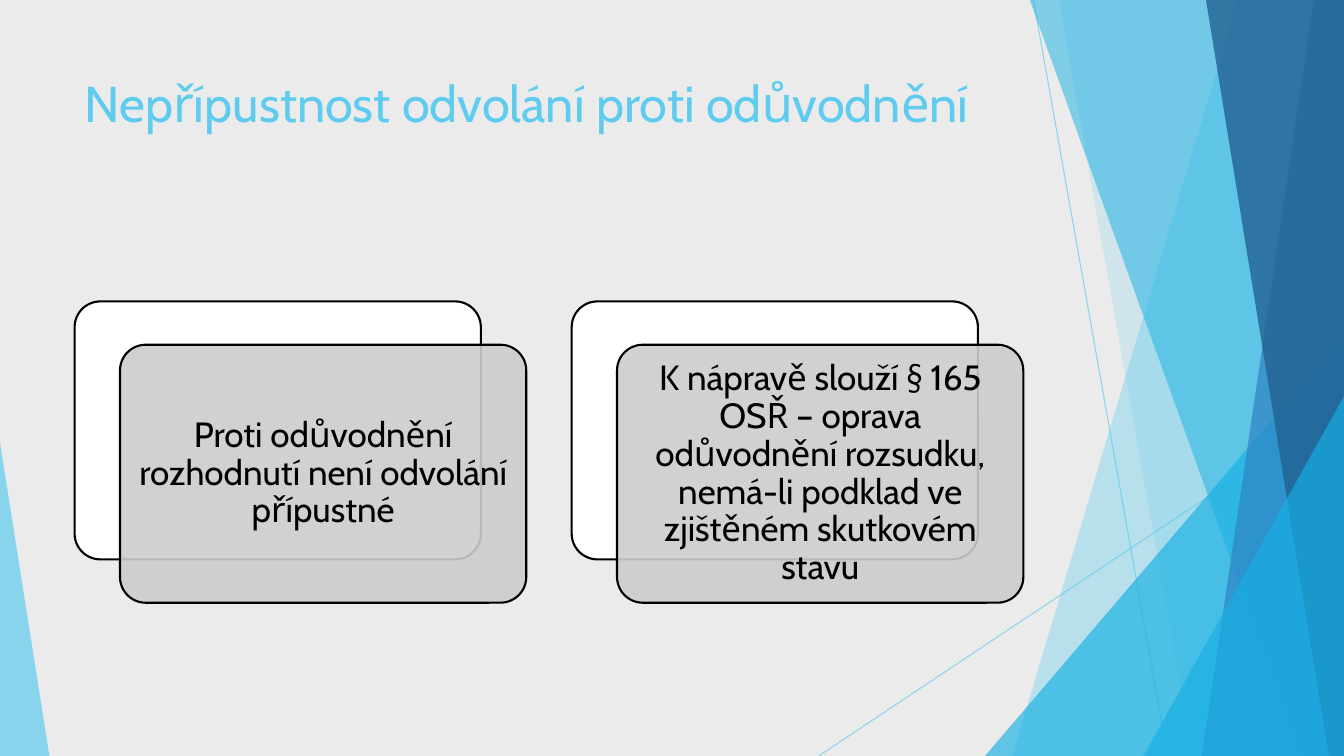
from dataclasses import dataclass

from lxml import etree
from pptx import Presentation
from pptx import util as u
from pptx.dml import color as c
from pptx.enum import shapes, text
from pptx.oxml import ns

SKY = c.RGBColor(0x5F, 0xCB, 0xEF)
AZURE = c.RGBColor(0x17, 0xB0, 0xE4)
BLUE = c.RGBColor(0x2E, 0x83, 0xC3)
NAVY = c.RGBColor(0x22, 0x62, 0x92)
PAPER = c.RGBColor(0xEB, 0xEB, 0xEB)
GRAY = c.RGBColor(0xCC, 0xCC, 0xCC)
WHITE = c.RGBColor(0xFF, 0xFF, 0xFF)
BLACK = c.RGBColor(0, 0, 0)

WIDTH, HEIGHT, TOP = 13.33, 7.5, -0.01
CARD_W, CARD_H, CARD_TOP = 4.03, 2.56, 2.99
SHIFT_X, SHIFT_Y, PADDING = 0.45, 0.43, 0.07


@dataclass
class Ray:
    x1: float
    y1: float
    x2: float
    y2: float


@dataclass
class Band:
    top_x: float
    bottom_x: float
    fill: c.RGBColor
    opacity: int


@dataclass
class Wedge:
    left: float
    top: float
    width: float
    apex: float
    fill: c.RGBColor
    opacity: int


@dataclass
class Card:
    left: float
    label: str


RAYS = [Ray(10.25, 0, 11.58, HEIGHT), Ray(WIDTH, 4.03, 8.12, HEIGHT)]
FACETS = [
    Band(12.28, 10.04, SKY, 36),
    Band(10.5, 11.83, SKY, 20),
    Wedge(9.77, 3.33, 3.56, 1, AZURE, 66),
    Band(10.21, 12.91, AZURE, 50),
    Band(13.03, 11.92, BLUE, 70),
    Band(11.96, 13.18, NAVY, 80),
    Wedge(11.34, 3.93, 1.99, 1, AZURE, 66),
    Wedge(0, 4.39, 0.49, 0, SKY, 70),
]
CARDS = [
    Card(0.74, "Proti odůvodnění rozhodnutí není odvolání přípustné"),
    Card(5.67, "K nápravě slouží § 165 OSŘ – oprava odůvodnění rozsudku, "
               "nemá-li podklad ve zjištěném skutkovém stavu"),
]


def apply(target, formats: dict) -> None:
    for name, value in formats.items():
        setattr(target, name, value)


def set_opacity(sp, percent: int) -> None:
    for clr in sp.element.spPr.iter(ns.qn("a:srgbClr")):
        etree.SubElement(clr, ns.qn("a:alpha"), val=str(percent * 1000))


def paint(sp, fill: c.RGBColor, opacity: int = 100) -> None:
    sp.shadow.inherit = False
    sp.fill.solid()
    sp.fill.fore_color.rgb = fill
    if opacity < 100:
        set_opacity(sp, opacity)
    sp.line.fill.background()


def draw_ray(s, ray: Ray) -> None:
    ends = [u.Inches(v) for v in (ray.x1, ray.y1, ray.x2, ray.y2)]
    sp = s.shapes.add_connector(shapes.MSO_CONNECTOR.STRAIGHT, *ends)
    sp.line.width = u.Pt(0.75)
    sp.line.color.rgb = SKY
    set_opacity(sp, 70)
    etree.SubElement(sp.element.spPr, ns.qn("a:effectLst"))


def draw_band(s, band: Band) -> None:
    corners = [(band.top_x, TOP), (WIDTH, TOP), (WIDTH, HEIGHT), (band.bottom_x, HEIGHT)]
    start, *rest = [(u.Inches(x), u.Inches(y)) for x, y in corners]
    outline = s.shapes.build_freeform(*start)
    outline.add_line_segments(rest, close=True)
    paint(outline.convert_to_shape(), band.fill, band.opacity)


def draw_wedge(s, wedge: Wedge) -> None:
    sp = s.shapes.add_shape(
        shapes.MSO_SHAPE.ISOSCELES_TRIANGLE, u.Inches(wedge.left), u.Inches(wedge.top),
        u.Inches(wedge.width), u.Inches(HEIGHT - wedge.top))
    sp.adjustments[0] = wedge.apex
    paint(sp, wedge.fill, wedge.opacity)


def draw_panel(s, left: float, top: float, fill: c.RGBColor, opacity: int) -> None:
    sp = s.shapes.add_shape(
        shapes.MSO_SHAPE.ROUNDED_RECTANGLE, u.Inches(left), u.Inches(top),
        u.Inches(CARD_W), u.Inches(CARD_H))
    sp.adjustments[0] = 0.1
    paint(sp, fill, opacity)
    sp.line.color.rgb = BLACK
    sp.line.width = u.Pt(1.5)


def add_text(s, box: tuple, label: str, size: int, color: c.RGBColor,
             frame: dict, paragraph: dict) -> None:
    tf = s.shapes.add_textbox(*[u.Inches(v) for v in box]).text_frame
    apply(tf, {"word_wrap": True, **frame})
    p = tf.paragraphs[0]
    apply(p, paragraph)
    r = p.add_run()
    r.text = label
    apply(r.font, {"name": "Cabin", "size": u.Pt(size)})
    r.font.color.rgb = color


def draw_card(s, card: Card) -> None:
    left, top = card.left + SHIFT_X, CARD_TOP + SHIFT_Y
    draw_panel(s, card.left, CARD_TOP, WHITE, 100)
    draw_panel(s, left, top, GRAY, 90)
    box = (left + PADDING, top + PADDING, CARD_W - 2 * PADDING, CARD_H - 2 * PADDING)
    margins = {f"margin_{side}": u.Inches(0.1) for side in ("left", "top", "right", "bottom")}
    add_text(s, box, card.label, 25, BLACK,
             {"vertical_anchor": text.MSO_ANCHOR.MIDDLE, **margins},
             {"alignment": text.PP_ALIGN.CENTER, "line_spacing": 0.9})


def main() -> None:
    prs = Presentation()
    apply(prs, {"slide_width": u.Inches(WIDTH), "slide_height": u.Inches(HEIGHT)})
    s = prs.slides.add_slide(prs.slide_layouts[6])
    s.background.fill.solid()
    s.background.fill.fore_color.rgb = PAPER
    for ray in RAYS:
        draw_ray(s, ray)
    for facet in FACETS:
        if isinstance(facet, Band):
            draw_band(s, facet)
        else:
            draw_wedge(s, facet)
    add_text(s, (0.74, 0.67, 9.4, 1.44), "Nepřípustnost odvolání proti odůvodnění", 36, SKY,
             {"vertical_anchor": text.MSO_ANCHOR.TOP}, {"alignment": text.PP_ALIGN.LEFT})
    for card in CARDS:
        draw_card(s, card)
    prs.save("out.pptx")


if __name__ == "__main__":
    main()
